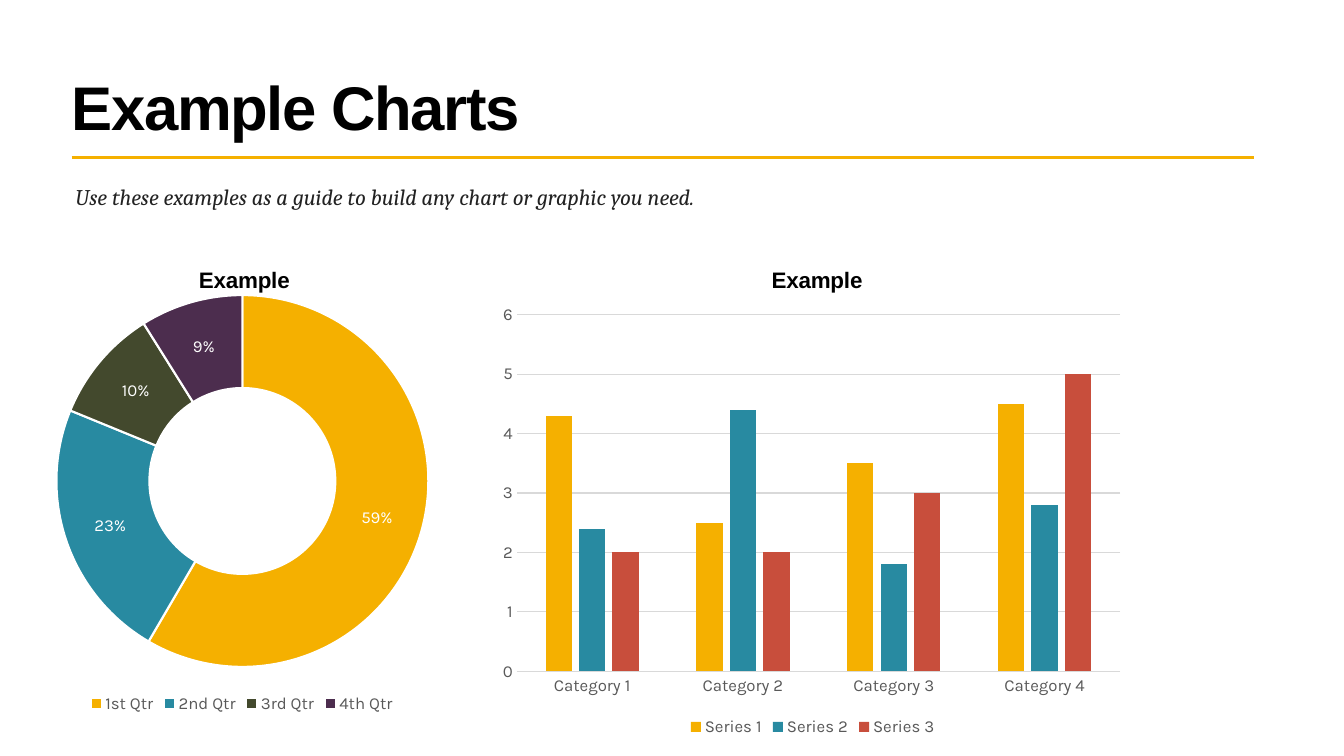
from dataclasses import dataclass

from lxml import etree
from pptx import Presentation
from pptx.chart.data import CategoryChartData
from pptx.dml.color import RGBColor
from pptx.enum.chart import XL_CHART_TYPE, XL_LEGEND_POSITION, XL_TICK_MARK
from pptx.enum.shapes import MSO_CONNECTOR
from pptx.enum.text import MSO_ANCHOR, PP_ALIGN
from pptx.oxml.ns import qn
from pptx.util import Inches, Pt

DOUGHNUT, COLUMNS = XL_CHART_TYPE.DOUGHNUT, XL_CHART_TYPE.COLUMN_CLUSTERED
BOTTOM, NO_TICK = XL_LEGEND_POSITION.BOTTOM, XL_TICK_MARK.NONE
STRAIGHT, MIDDLE, LEFT = MSO_CONNECTOR.STRAIGHT, MSO_ANCHOR.MIDDLE, PP_ALIGN.LEFT


@dataclass(frozen=True)
class Theme:
    black: str = "000000"
    ink: str = "222222"
    label: str = "595959"
    grid: str = "D9D9D9"
    white: str = "FFFFFF"
    yellow: str = "F5B000"
    teal: str = "288AA1"
    olive: str = "43492D"
    plum: str = "4C2D4E"
    red: str = "C84E3C"
    heading: str = "Arial"
    body: str = "Cambria"
    chart: str = "Karla"
    title_size: int = 44
    text_size: int = 16
    label_size: int = 12
    chart_size: int = 10


theme = Theme()


def set_font(font, name, size, color, bold=False, italic=False):
    font.name, font.size = name, Pt(size)
    font.bold, font.italic = bold, italic
    font.color.rgb = RGBColor.from_string(color)


def place(parent, index, **fractions):
    """Give a chart title or plot area a manual layout, as fractions of the chart."""
    for old in parent.findall(qn("c:layout")):
        parent.remove(old)
    layout = etree.Element(qn("c:layout"))
    manual = etree.SubElement(layout, qn("c:manualLayout"))
    settings = {"xMode": "edge", "yMode": "edge", **fractions}
    if "w" in fractions:
        settings = {"layoutTarget": "inner", **settings}
    for tag, value in settings.items():
        etree.SubElement(manual, qn(f"c:{tag}")).set("val", str(value))
    parent.insert(index, layout)


deck = Presentation()
deck.slide_width, deck.slide_height = Inches(13.33), Inches(7.5)
page = deck.slides.add_slide(deck.slide_layouts[5])

# Title
title = page.shapes.title
title.left, title.top = Inches(0.61), Inches(0.64)
title.width, title.height = Inches(11.5), Inches(0.92)
title.text_frame.vertical_anchor = MIDDLE
para = title.text_frame.paragraphs[0]
para.alignment, para.line_spacing = LEFT, 0.9
span = para.add_run()
span.text = "Example Charts"
set_font(span.font, theme.heading, theme.title_size, theme.black, bold=True)
span.font._element.set("spc", "-100")

# Rule under the title
rule = page.shapes.add_connector(STRAIGHT, Inches(0.71), Inches(1.56), Inches(12.44), Inches(1.56))
rule.line.color.rgb = RGBColor.from_string(theme.yellow)
rule.line.width = Pt(2.25)
etree.SubElement(rule.element.spPr, qn("a:effectLst"))

# Introduction
intro = page.shapes.add_textbox(Inches(0.65), Inches(1.76), Inches(10.15), Inches(0.53))
intro.text_frame.word_wrap = True
para = intro.text_frame.paragraphs[0]
para.line_spacing = Pt(20)
span = para.add_run()
span.text = "Use these examples as a guide to build any chart or graphic you need."
set_font(span.font, theme.body, theme.text_size, theme.ink, italic=True)

# Both charts: data, frame, title position and plot area
chart_plans = [
    (DOUGHNUT, (0.28, 2.26, 4.24, 4.86),
     ["1st Qtr", "2nd Qtr", "3rd Qtr", "4th Qtr"],
     [("Series 1", (59, 23, 10, 9))],
     {"x": 0.39, "y": 0.07}, {"x": 0.066, "y": 0.137, "w": 0.87, "h": 0.76}),
    (COLUMNS, (4.87, 2.4, 6.38, 4.95),
     ["Category 1", "Category 2", "Category 3", "Category 4"],
     [("Series 1", (4.3, 2.5, 3.5, 4.5)),
      ("Series 2", (2.4, 4.4, 1.8, 2.8)),
      ("Series 3", (2, 2, 3, 5))],
     {"x": 0.43, "y": 0.04}, {"x": 0.04, "y": 0.146, "w": 0.938, "h": 0.715}),
]
charts = []
for kind, frame, categories, rows, title_spot, plot_spot in chart_plans:
    data = CategoryChartData()
    data.categories = categories
    for name, values in rows:
        data.add_series(name, values)
    chart = page.shapes.add_chart(kind, *map(Inches, frame), data).chart
    set_font(chart.font, theme.chart, theme.chart_size, theme.black)

    chart.has_title = True
    span = chart.chart_title.text_frame.paragraphs[0].add_run()
    span.text = "Example"
    set_font(span.font, theme.heading, theme.text_size, theme.black, bold=True)
    place(chart.element.find(".//" + qn("c:title")), 1, **title_spot)
    place(chart.element.find(".//" + qn("c:plotArea")), 0, **plot_spot)

    chart.has_legend = True
    chart.legend.position = BOTTOM
    chart.legend.include_in_layout = False
    set_font(chart.legend.font, theme.chart, theme.label_size, theme.label)
    charts.append(chart)
doughnut, columns = charts

# Doughnut slices and labels
doughnut.plots[0].vary_by_categories = True
doughnut.element.find(".//" + qn("c:holeSize")).set("val", "75")
quarters = doughnut.plots[0].series[0]
for index, color in enumerate((theme.yellow, theme.teal, theme.olive, theme.plum)):
    slice_format = quarters.points[index].format
    slice_format.fill.solid()
    slice_format.fill.fore_color.rgb = RGBColor.from_string(color)
    slice_format.line.color.rgb = RGBColor.from_string(theme.white)
    slice_format.line.width = Pt(1.5)
labels = quarters.data_labels
labels.show_value = True
labels.number_format, labels.number_format_is_linked = '0"%"', False
set_font(labels.font, theme.chart, theme.label_size, theme.white)

# Column colours and spacing
bars = columns.plots[0]
bars.vary_by_categories = False
bars.gap_width, bars.overlap = 219, -27
for series, color in zip(bars.series, (theme.yellow, theme.teal, theme.red)):
    series.format.fill.solid()
    series.format.fill.fore_color.rgb = RGBColor.from_string(color)

# Column axes
category_axis, value_axis = columns.category_axis, columns.value_axis
for axis in (category_axis, value_axis):
    axis.major_tick_mark = axis.minor_tick_mark = NO_TICK
    set_font(axis.tick_labels.font, theme.chart, theme.label_size, theme.label)
value_axis.minimum_scale, value_axis.maximum_scale, value_axis.major_unit = 0, 6, 1
value_axis.has_major_gridlines = True
value_axis.format.line.fill.background()
for line in (category_axis.format.line, value_axis.major_gridlines.format.line):
    line.color.rgb = RGBColor.from_string(theme.grid)
    line.width = Pt(0.75)

deck.save("out.pptx")
